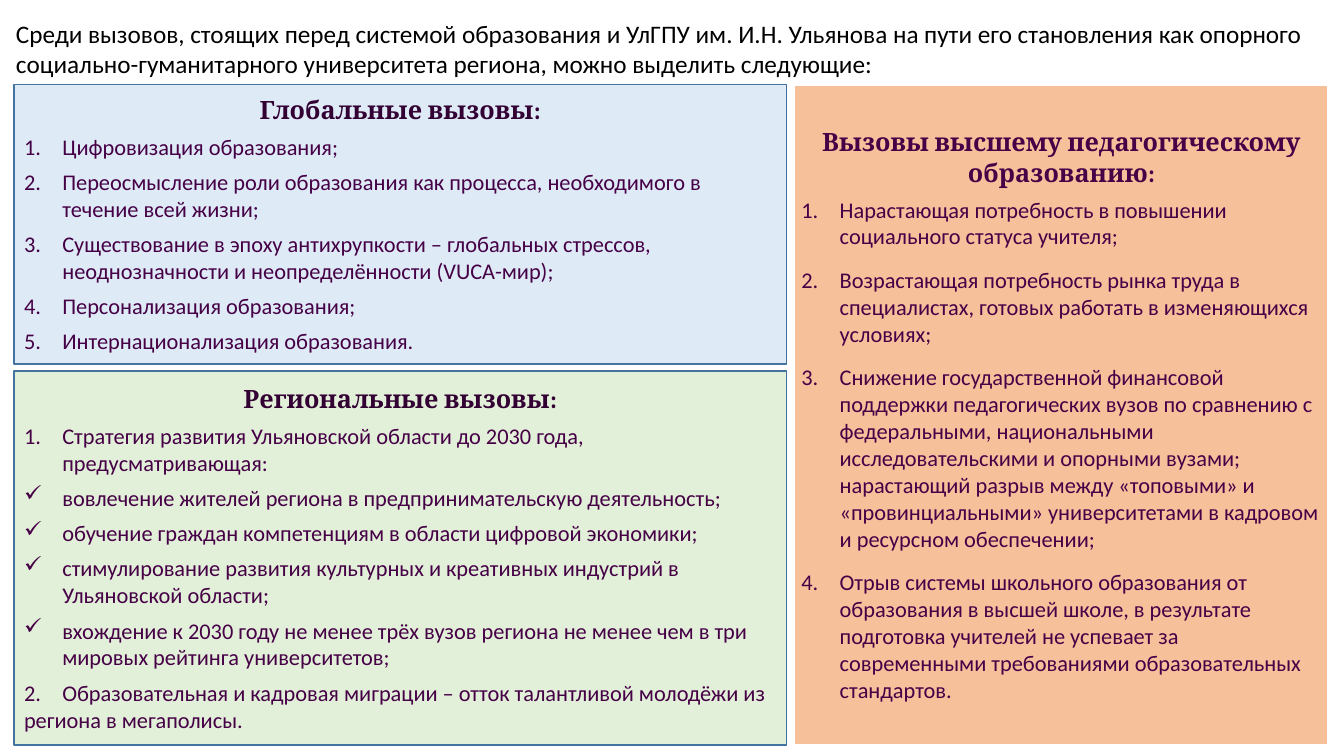
import pptx
import pptx.util
import pptx.dml.color
import pptx.enum.shapes
import pptx.enum.text
import pptx.oxml.ns
import lxml.etree

Pt = pptx.util.Pt
Inches = pptx.util.Inches
qn = pptx.oxml.ns.qn

COLORS = {
    "black": "000000",
    "white": "FFFFFF",
    "heading": "320032",
    "body": "460046",
    "border": "43739E",
    "global": "DEEBF7",
    "higher": "F4B183",
    "regional": "E2F0D9",
}
INDENT = Inches(0.38)

deck = pptx.Presentation()
deck.slide_width = Inches(13.33)
deck.slide_height = Inches(7.5)
page = deck.slides.add_slide(deck.slide_layouts[6])


def place(left, top, width, height):
    return [
        round(deck.slide_width * left / 100),
        round(deck.slide_height * top / 100),
        round(deck.slide_width * width / 100),
        round(deck.slide_height * height / 100),
    ]


def add_span(para, text, size, font, color, bold=False):
    span = para.add_run()
    span.text = text
    span.font.size = Pt(size)
    span.font.name = font
    span.font.bold = bold
    span.font.color.rgb = pptx.dml.color.RGBColor.from_string(COLORS[color])


intro = page.shapes.add_textbox(*place(0.45, 1.73, 99.53, 9.47))
intro.text_frame.word_wrap = True
add_span(
    intro.text_frame.paragraphs[0],
    "Среди вызовов, стоящих перед системой образования и УлГПУ им. И.Н. Ульянова "
    "на пути его становления как опорного социально-гуманитарного университета региона, "
    "можно выделить следующие:",
    18, "Calibri", "black",
)

panels = [
    {
        "place": (1.05, 11.2, 57.45, 36.93),
        "fill": "global", "alpha": 100, "line": ("border", 1),
        "inset": (0.1, 0.05), "after": 6,
        "heading": ("Глобальные вызовы:", "heading"),
        "items": [
            ("1", "Цифровизация образования;"),
            ("1", "Переосмысление роли образования как процесса, необходимого в течение всей жизни;"),
            ("1", "Существование в эпоху антихрупкости – глобальных стрессов, "
                  "неоднозначности и неопределённости (VUCA-мир);"),
            ("1", "Персонализация образования;"),
            ("1", "Интернационализация образования."),
        ],
    },
    {
        "place": (59.1, 11.2, 39.75, 87.33),
        "fill": "higher", "alpha": 80, "line": ("white", 1.5),
        "inset": (0.07, 0.07), "after": 12,
        "heading": ("Вызовы высшему педагогическому образованию:", "body"),
        "items": [
            ("1", "Нарастающая потребность в повышении социального статуса учителя;"),
            ("1", "Возрастающая потребность рынка труда в специалистах, "
                  "готовых работать в изменяющихся условиях;"),
            ("1", "Снижение государственной финансовой поддержки педагогических вузов "
                  "по сравнению с федеральными, национальными исследовательскими и опорными вузами; "
                  "нарастающий разрыв между «топовыми» и «провинциальными» университетами "
                  "в кадровом и ресурсном обеспечении;"),
            ("1", "Отрыв системы школьного образования от образования в высшей школе, "
                  "в результате подготовка учителей не успевает за современными требованиями "
                  "образовательных стандартов."),
        ],
    },
    {
        "place": (1.05, 49.07, 57.45, 49.47),
        "fill": "regional", "alpha": 100, "line": ("border", 1),
        "inset": (0.1, 0.05), "after": 6,
        "heading": ("Региональные вызовы:", "heading"),
        "items": [
            ("1", "Стратегия развития Ульяновской области до 2030 года, предусматривающая:"),
            ("✓", "вовлечение жителей региона в предпринимательскую деятельность;"),
            ("✓", "обучение граждан компетенциям в области цифровой экономики;"),
            ("✓", "стимулирование развития культурных и креативных индустрий в Ульяновской области;"),
            ("✓", "вхождение к 2030 году не менее трёх вузов региона "
                  "не менее чем в три мировых рейтинга университетов;"),
            ("tab", "2.\tОбразовательная и кадровая миграции – "
                    "отток талантливой молодёжи из региона в мегаполисы."),
        ],
    },
]

for panel in panels:
    box = page.shapes.add_shape(pptx.enum.shapes.MSO_SHAPE.RECTANGLE, *place(*panel["place"]))
    box.shadow.inherit = False
    box.fill.solid()
    box.fill.fore_color.rgb = pptx.dml.color.RGBColor.from_string(COLORS[panel["fill"]])
    if panel["alpha"] < 100:
        tint = box.fill._xPr.find(qn("a:solidFill")).find(qn("a:srgbClr"))
        lxml.etree.SubElement(tint, qn("a:alpha"), val=str(panel["alpha"] * 1000))
    line_color, line_width = panel["line"]
    box.line.color.rgb = pptx.dml.color.RGBColor.from_string(COLORS[line_color])
    box.line.width = Pt(line_width)

    frame = box.text_frame
    frame.word_wrap = True
    frame.vertical_anchor = pptx.enum.text.MSO_ANCHOR.MIDDLE
    across, down = panel["inset"]
    frame.margin_left = frame.margin_right = Inches(across)
    frame.margin_top = frame.margin_bottom = Inches(down)

    heading, heading_color = panel["heading"]
    para = frame.paragraphs[0]
    para.alignment = pptx.enum.text.PP_ALIGN.CENTER
    para.space_after = Pt(6)
    add_span(para, heading, 18, "Cambria", heading_color, True)

    for marker, text in panel["items"]:
        para = frame.add_paragraph()
        para.alignment = pptx.enum.text.PP_ALIGN.LEFT
        para.space_after = Pt(panel["after"])
        add_span(para, text, 16, "Calibri", "body")
        settings = para._p.get_or_add_pPr()
        if marker == "tab":
            stops = lxml.etree.SubElement(settings, qn("a:tabLst"))
            lxml.etree.SubElement(stops, qn("a:tab"), pos=str(INDENT), algn="l")
            continue
        settings.set("marL", str(INDENT))
        settings.set("indent", str(-INDENT))
        if marker == "1":
            lxml.etree.SubElement(settings, qn("a:buAutoNum"), type="arabicPeriod")
        else:
            lxml.etree.SubElement(settings, qn("a:buChar"), char=marker)

deck.save("out.pptx")
